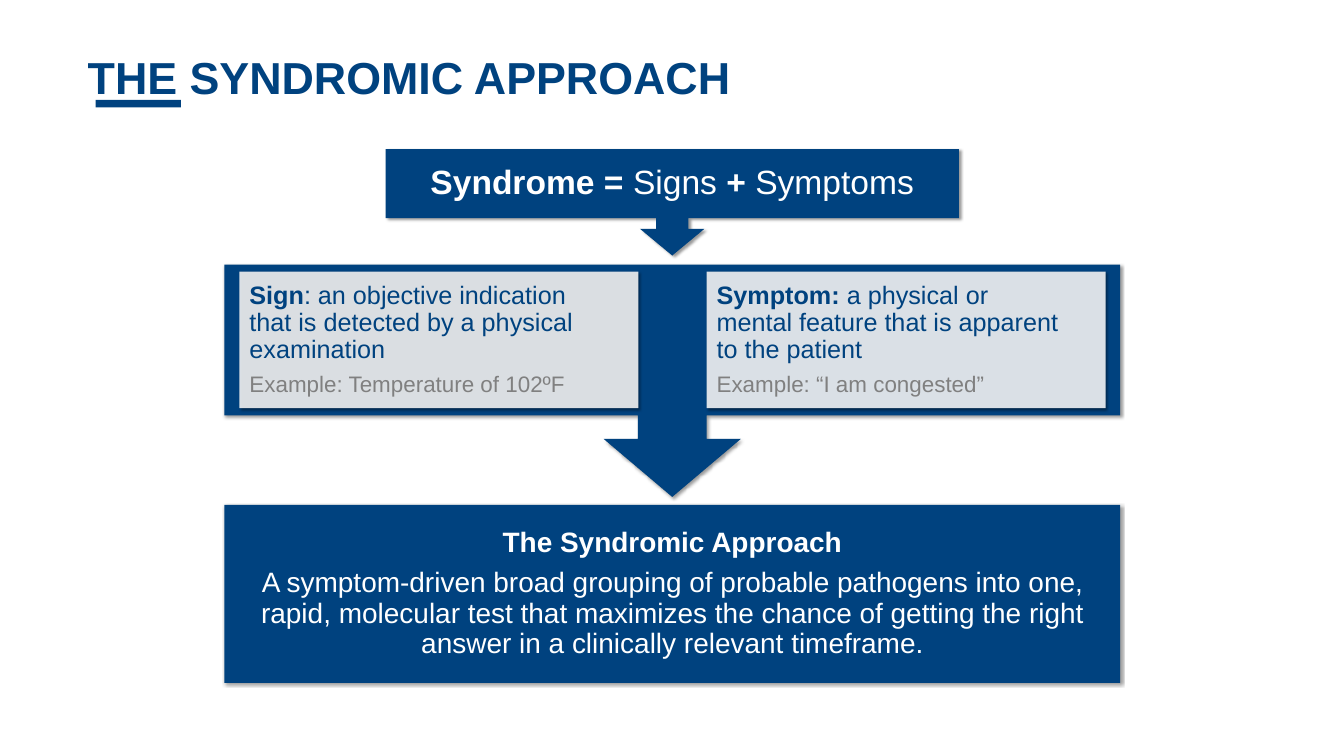
from lxml.etree import SubElement
from pptx import Presentation
from pptx.dml.color import RGBColor
from pptx.enum.shapes import MSO_SHAPE
from pptx.enum.text import MSO_ANCHOR, MSO_AUTO_SIZE, PP_ALIGN
from pptx.oxml import parse_xml
from pptx.oxml.ns import nsdecls, qn
from pptx.util import Emu, Pt

PX = 9144  # 100 px to the inch
COLORS = {"navy": "00427F", "white": "FFFFFF", "light": "F2F2F2", "mist": "DAE0E6", "gray": "808080"}
CENTER = 1334


def write_text(frame, paragraphs, size, color, align=PP_ALIGN.LEFT, anchor=MSO_ANCHOR.MIDDLE,
               insets=(10, 5, 10, 5), spacing=0.35):
    """Each paragraph is a list of (text, bold) runs; size and color are lists, one per paragraph."""
    frame.word_wrap = True
    frame.auto_size = MSO_AUTO_SIZE.NONE
    frame.vertical_anchor = anchor
    frame.margin_left, frame.margin_top, frame.margin_right, frame.margin_bottom = [
        Emu(inset * PX) for inset in insets]
    for i, runs in enumerate(paragraphs):
        paragraph = frame.paragraphs[0] if i == 0 else frame.add_paragraph()
        paragraph.alignment = align
        paragraph.line_spacing = 0.9
        paragraph.space_before = Pt(0)
        paragraph.space_after = Pt(round(size[i] * spacing))
        for text, bold in runs:
            for n, line in enumerate(text.split("\n")):
                if n:
                    paragraph.add_line_break()
                run = paragraph.add_run()
                run.text = line
                run.font.name = "Arial"
                run.font.size = Pt(size[i])
                run.font.bold = bold
                run.font.color.rgb = RGBColor.from_string(COLORS[color[i]])


def style_block(block, color, shadow=True):
    block.fill.solid()
    block.fill.fore_color.rgb = RGBColor.from_string(COLORS[color])
    block.line.fill.background()
    block.shadow.inherit = False
    if shadow:
        effects = block.element.spPr.find(qn("a:effectLst"))
        effects.append(parse_xml(
            f'<a:outerShdw {nsdecls("a")} blurRad="{Pt(4)}" dist="{Pt(3)}" dir="2700000" '
            'algn="tl" rotWithShape="0"><a:srgbClr val="000000"><a:alpha val="40000"/>'
            '</a:srgbClr></a:outerShdw>'))


prs = Presentation()
prs.slide_width, prs.slide_height = Emu(2667 * PX), Emu(1500 * PX)
slide = prs.slides.add_slide(prs.slide_layouts[5])

# Title with accent bar
title = slide.shapes.title
title.left, title.top, title.width, title.height = [Emu(v * PX) for v in (164, 0, 2366, 211)]
write_text(title.text_frame, [[("THE SYNDROMIC APPROACH", True)]], [64], ["navy"],
           anchor=MSO_ANCHOR.BOTTOM, spacing=0)
accent = slide.shapes.add_shape(MSO_SHAPE.RECTANGLE, *[Emu(v * PX) for v in (190, 198, 169, 15)])
style_block(accent, "navy", shadow=False)

# Conclusion box
conclusion = slide.shapes.add_shape(
    MSO_SHAPE.RECTANGLE, *[Emu(v * PX) for v in (445, 1002, 1778, 353)])
style_block(conclusion, "navy")
write_text(conclusion.text_frame, [
    [("The Syndromic Approach", True)],
    [("A symptom-driven broad grouping of probable pathogens into one, rapid, molecular test "
      "that maximizes the chance of getting the right answer in a clinically relevant timeframe.",
      False)],
], [40, 40], ["white", "white"], align=PP_ALIGN.CENTER, insets=(26, 26, 26, 26))

# Boxes with a down arrow: half widths of box, stem and head, then the levels from top to tip
callouts = []
for box, stem, head, top, bottom, neck, tip in [
    (889, 68, 136, 525, 824, 871, 986),
    (569, 32, 64, 296, 433, 454, 507),
]:
    right_side = [(box, top), (box, bottom), (stem, bottom), (stem, neck), (head, neck)]
    outline = [(CENTER + dx, y) for dx, y in right_side] + [(CENTER, tip)]
    outline += [(CENTER - dx, y) for dx, y in reversed(right_side)]
    builder = slide.shapes.build_freeform(*outline[0], scale=PX)
    builder.add_line_segments(outline[1:], close=True)
    callout = builder.convert_to_shape()
    style_block(callout, "navy")
    callouts.append(callout)

# Definition of the syndrome
write_text(callouts[1].text_frame,
           [[("Syndrome = ", True), ("Signs ", False), ("+", True), (" Symptoms", False)]],
           [48], ["white"], align=PP_ALIGN.CENTER, insets=(31, 31, 31, 105))

# Sign and symptom panels
for left, fill, term, meaning, example in [
    (475, "light", "Sign", ": an objective indication \nthat is detected by a physical examination",
     "Example: Temperature of 102ºF"),
    (1402, "mist", "Symptom: ", "a physical or \nmental feature that is apparent \nto the patient",
     "Example: “I am congested”"),
]:
    panel = slide.shapes.add_shape(
        MSO_SHAPE.RECTANGLE, *[Emu(v * PX) for v in (left, 539, 792, 271)])
    style_block(panel, fill)
    if fill == "light":
        fill_color = panel.element.spPr.find(qn("a:solidFill")).find(qn("a:srgbClr"))
        SubElement(fill_color, qn("a:alpha")).set("val", "90000")
    write_text(panel.text_frame, [[(term, True), (meaning, False)], [(example, False)]],
               [36, 32], ["navy", "gray"], insets=(20, 4, 20, 4))

prs.save("out.pptx")
